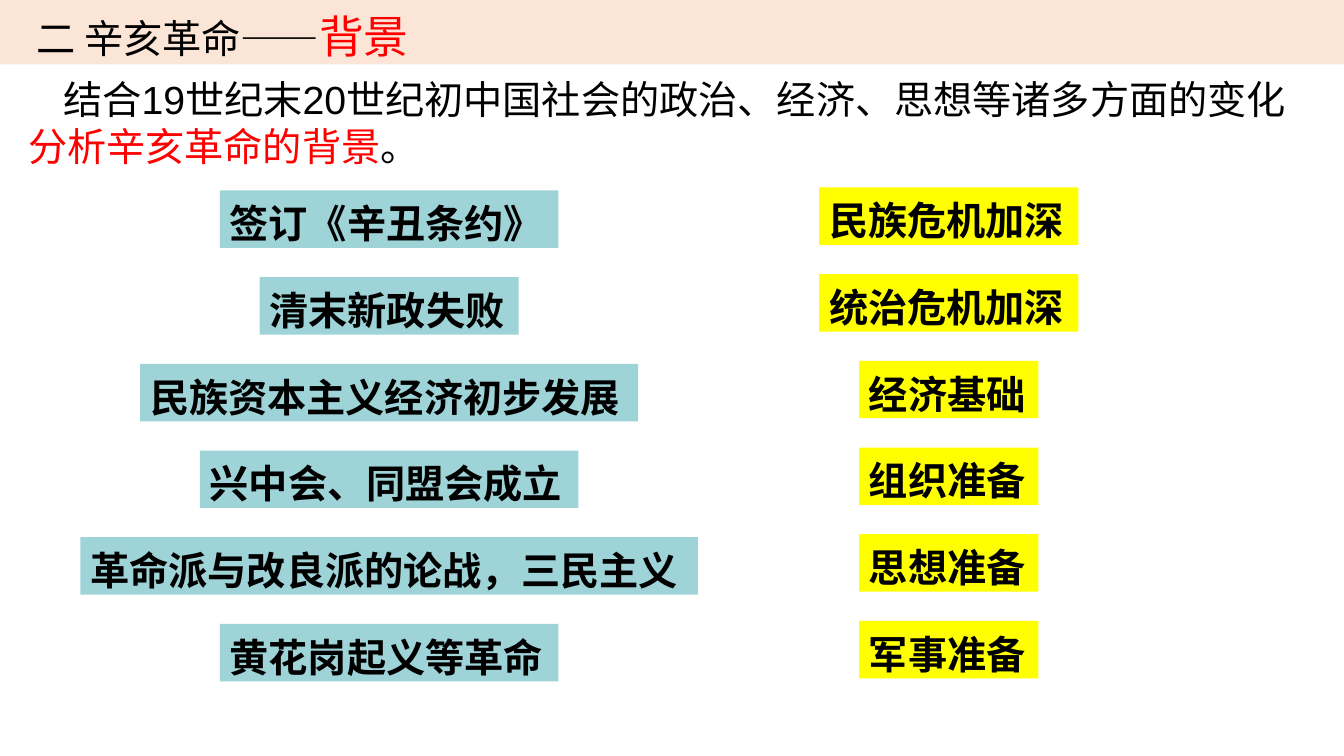
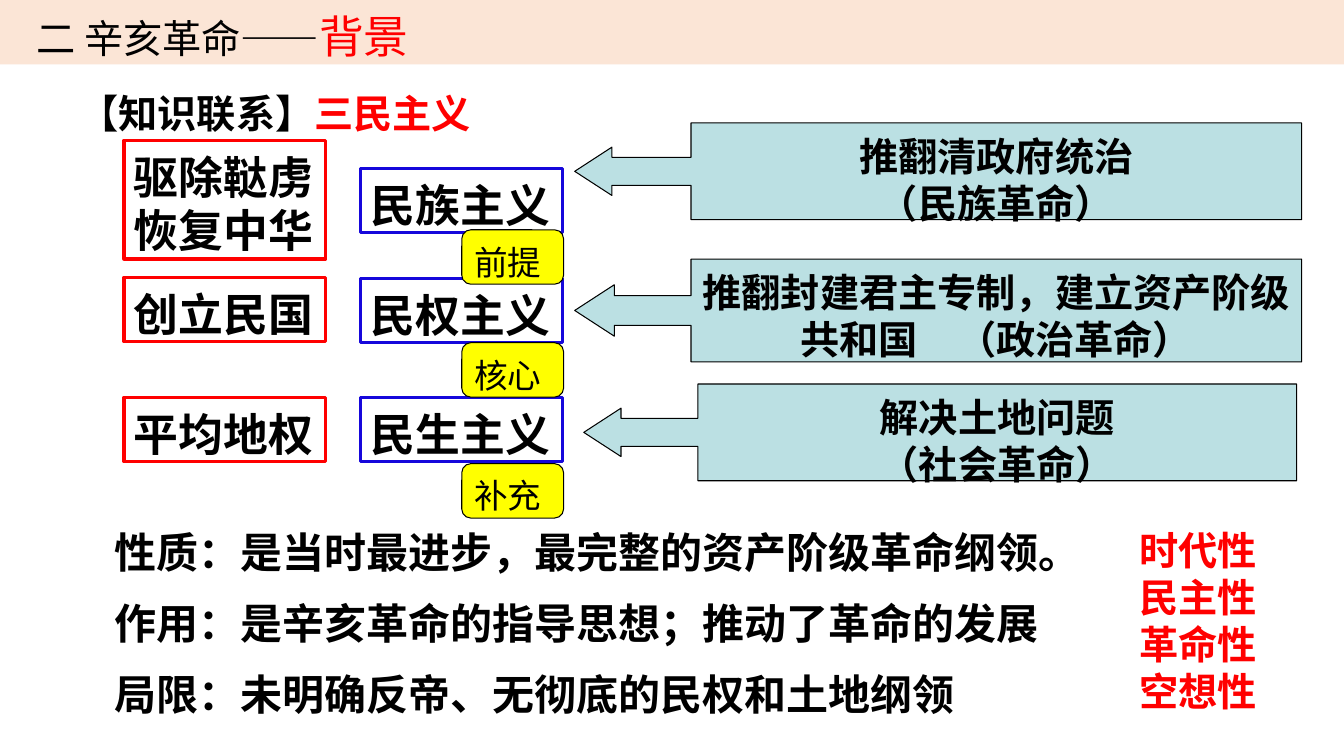
from lxml import etree
from pptx import Presentation
from pptx.dml.color import RGBColor
from pptx.enum.shapes import MSO_SHAPE
from pptx.enum.text import MSO_ANCHOR, PP_ALIGN
from pptx.oxml.ns import qn
from pptx.util import Inches, Pt

RECTANGLE = MSO_SHAPE.RECTANGLE
ROUNDED = MSO_SHAPE.ROUNDED_RECTANGLE
CALLOUT = MSO_SHAPE.LEFT_ARROW_CALLOUT
TOP = MSO_ANCHOR.TOP
LEFT, CENTER = PP_ALIGN.LEFT, PP_ALIGN.CENTER

BLACK, RED, BLUE, YELLOW = "000000", "FF0000", "1607DB", "FFFF00"
PEACH, TEAL, PALE_TEAL = "FBE5D6", "9ED3D7", "BBE0E3"
ARIAL, TIMES, NOTO = "Arial", "Times New Roman", "Noto Sans CJK SC"

TITLE = [("二 辛亥革命——", BLACK, 28), ("背景", RED, 32)]
QUESTION = [
    ("结合19世纪末20世纪初中国社会的政治、经济、思想等诸多方面的变化", BLACK),
    ("分析辛亥革命的背景", RED),
    ("。", BLACK),
]
EVENTS = ["签订《辛丑条约》", "清末新政失败", "民族资本主义经济初步发展",
          "兴中会、同盟会成立", "革命派与改良派的论战，三民主义", "黄花岗起义等革命"]
CONDITIONS = ["民族危机加深", "统治危机加深", "经济基础", "组织准备", "思想准备", "军事准备"]
LABEL_COLUMNS = [(EVENTS, 3.86, 1.89, TEAL), (CONDITIONS, 9.41, 1.86, YELLOW)]

LINK_HEADING = [("【知识联系】", BLACK), ("三民主义", RED)]
SLOGANS = [(1.39, 1.18, ["驱除鞑虏", "恢复中华"]), (2.75, 0.64, ["创立民国"]),
           (3.94, 0.64, ["平均地权"])]
PRINCIPLES = [(1.67, 0.64, ["民族主义"]), (2.76, 0.64, ["民权主义"]),
              (3.94, 0.64, ["民生主义"])]
MEANINGS = [
    ((5.7, 1.22, 7.21, 0.96), TIMES, ["推翻清政府统治", "（民族革命）"]),
    ((5.7, 2.57, 7.21, 1.02), NOTO, ["推翻封建君主专制，建立资产阶级共和国　（政治革命）"]),
    ((5.79, 3.81, 7.07, 0.96), TIMES, ["解决土地问题", "（社会革命）"]),
]
CALLOUT_ADJUSTMENTS = (0.289, 0.25, 0.385, 0.84)
ROLES = [(2.28, "前提"), (3.4, "核心"), (4.6, "补充")]
EVALUATION = ["性质：是当时最进步，最完整的资产阶级革命纲领。",
              "作用：是辛亥革命的指导思想；推动了革命的发展",
              "局限：未明确反帝、无彻底的民权和土地纲领"]
FEATURES = ["时代性", "民主性", "革命性", "空想性"]


def color(value):
    return RGBColor.from_string(value)


def write(box, lines, size, font=ARIAL, bold=False, ink=BLACK, align=LEFT,
          inset=0.1, gap=0, first_indent=0):
    frame = box.text_frame
    frame.word_wrap = True
    frame.vertical_anchor = TOP
    frame.margin_left, frame.margin_right = Inches(inset), Inches(0.1)
    frame.margin_top, frame.margin_bottom = Inches(0.09), 0
    for index, line in enumerate(lines):
        para = frame.paragraphs[0] if index == 0 else frame.add_paragraph()
        para.alignment = align
        para.line_spacing = Pt(round(size * 1.2, 1))
        if index and gap:
            para.space_before = Pt(gap)
        para.font.name, para.font.size, para.font.bold = font, Pt(size), bold
        properties = para._p.get_or_add_pPr()
        east_asian = etree.SubElement(properties.find(qn("a:defRPr")), qn("a:ea"))
        east_asian.set("typeface", NOTO)
        if first_indent:
            properties.set("indent", str(Inches(first_indent)))
        spans = [(line, ink)] if isinstance(line, str) else line
        for text, span_ink, *span_size in spans:
            span = para.add_run()
            span.text = text
            span.font.color.rgb = color(span_ink)
            if span_size:
                span.font.size = Pt(span_size[0])


def add_text(page, place, lines, size, **style):
    box = page.shapes.add_textbox(*map(Inches, place))
    write(box, lines, size, **style)


def add_box(page, place, lines, size, kind=RECTANGLE, fill=None, line=None,
            weight=0.75, adjustments=(), **style):
    box = page.shapes.add_shape(kind, *map(Inches, place))
    box.shadow.inherit = False
    for index, value in enumerate(adjustments):
        box.adjustments[index] = value
    if fill:
        box.fill.solid()
        box.fill.fore_color.rgb = color(fill)
    else:
        box.fill.background()
    if line:
        box.line.color.rgb = color(line)
        box.line.width = Pt(weight)
    else:
        box.line.fill.background()
    write(box, lines, size, **style)


def add_page(deck):
    page = deck.slides.add_slide(deck.slide_layouts[6])
    add_box(page, (0, 0, 13.33, 0.64), [TITLE], 32, fill=PEACH, font=NOTO, inset=0.36)
    return page


def build_background(deck):
    page = add_page(deck)
    add_text(page, (0.18, 0.66, 12.98, 1.04), [QUESTION], 28, first_indent=0.35)
    for labels, middle, top, fill in LABEL_COLUMNS:
        for row, label in enumerate(labels):
            width = 0.2 + 0.395 * len(label)
            place = (middle - width / 2, top + 0.86 * row, width, 0.57)
            add_box(page, place, [label], 28, fill=fill, bold=True)


def build_principles(deck):
    page = add_page(deck)
    add_text(page, (0.69, 0.8, 4.15, 0.57), [LINK_HEADING], 28, bold=True)
    for left, outline, entries in ((1.23, RED, SLOGANS), (3.58, BLUE, PRINCIPLES)):
        for top, height, lines in entries:
            add_box(page, (left, top, 2, height), lines, 32, line=outline,
                    weight=2.25, bold=True)
    for place, font, lines in MEANINGS:
        add_box(page, place, lines, 28, kind=CALLOUT, fill=PALE_TEAL, line=BLACK,
                adjustments=CALLOUT_ADJUSTMENTS, font=font, bold=True, align=CENTER)
    for top, role in ROLES:
        add_box(page, (4.58, top, 1.01, 0.54), [role], 24, kind=ROUNDED,
                fill=YELLOW, line=BLACK)
    add_text(page, (1.04, 5.13, 10.57, 2.12), EVALUATION, 30, font=NOTO, bold=True, gap=15)
    add_text(page, (11.2, 5.13, 1.39, 1.99), FEATURES, 28, font=NOTO, bold=True, ink=RED)


def main():
    deck = Presentation()
    deck.slide_width, deck.slide_height = Inches(13.33), Inches(7.5)
    build_background(deck)
    build_principles(deck)
    deck.save("out.pptx")


if __name__ == "__main__":
    main()
